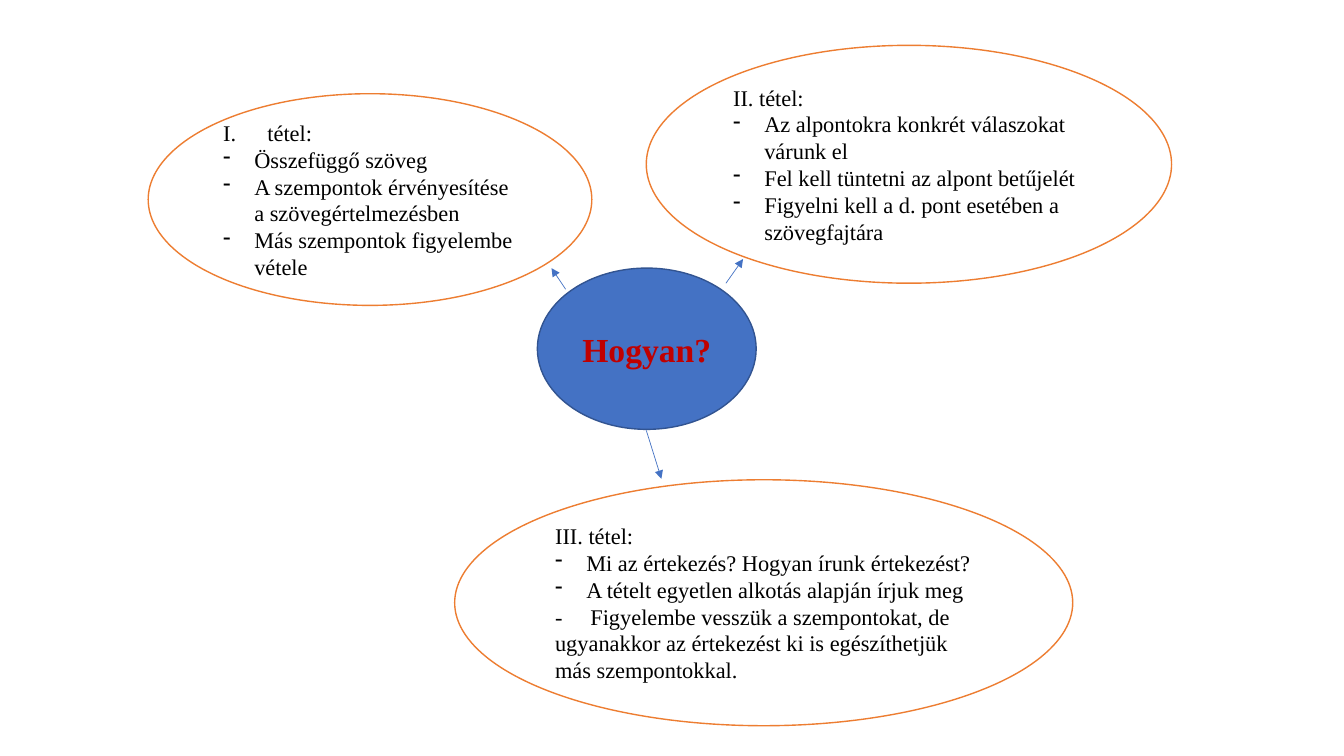
"""Build a slide with a central question and arrows to three exam topics."""
from lxml.etree import SubElement
from pptx import Presentation
from pptx.dml.color import RGBColor
from pptx.enum.shapes import MSO_CONNECTOR, MSO_SHAPE
from pptx.enum.text import MSO_ANCHOR, PP_ALIGN
from pptx.oxml.ns import qn
from pptx.util import Pt

PX = 9144
THEME = {
    "font": "Times New Roman",
    "blue": RGBColor.from_string("4472C4"),
    "navy": RGBColor.from_string("325491"),
    "orange": RGBColor.from_string("ED7D31"),
    "white": RGBColor.from_string("FFFFFF"),
    "black": RGBColor.from_string("000000"),
    "red": RGBColor.from_string("C00000"),
    "hub_size": Pt(24),
    "body_size": Pt(16),
    "outline": Pt(1),
    "arrow": Pt(0.5),
}
MARKS = {
    "dash": (31, "buChar", {"char": "-"}),
    "roman": (44, "buAutoNum", {"type": "romanUcPeriod"}),
}
TOPICS = [
    {
        "box": (147, 93, 440, 210),
        "arrow": (561, 287, 547, 266),
        "lines": [
            ("roman", "tétel:"),
            ("dash", "Összefüggő szöveg"),
            ("dash", "A szempontok érvényesítése a szövegértelmezésben"),
            ("dash", "Más szempontok figyelembe vétele"),
        ],
    },
    {
        "box": (641, 45, 521, 236),
        "arrow": (720, 281, 737, 257),
        "lines": [
            ("plain", "II. tétel:"),
            ("dash", "Az alpontokra konkrét válaszokat várunk el"),
            ("dash", "Fel kell tüntetni az alpont betűjelét"),
            ("dash", "Figyelni kell a d. pont esetében a szövegfajtára"),
        ],
    },
    {
        "box": (451, 476, 613, 244),
        "arrow": (641, 427, 656, 475),
        "lines": [
            ("plain", "III. tétel:"),
            ("dash", "Mi az értekezés? Hogyan írunk értekezést?"),
            ("dash", "A tételt egyetlen alkotás alapján írjuk meg"),
            ("tab", "-\tFigyelembe vesszük a szempontokat, de ugyanakkor az "
                    "értekezést ki is egészíthetjük más szempontokkal."),
        ],
    },
]


def add_ellipse(slide, box, fill, line):
    """Add an outlined ellipse with vertically centred text."""
    sp = slide.shapes.add_shape(MSO_SHAPE.OVAL, *[v * PX for v in box])
    sp.shadow.inherit = False
    sp.fill.solid()
    sp.fill.fore_color.rgb = THEME[fill]
    sp.line.color.rgb = THEME[line]
    sp.line.width = THEME["outline"]
    sp.text_frame.word_wrap = True
    sp.text_frame.vertical_anchor = MSO_ANCHOR.MIDDLE
    return sp


def add_text(p, text, color, **formats):
    """Add a formatted run to a paragraph."""
    r = p.add_run()
    r.text = text
    r.font.color.rgb = THEME[color]
    for name, value in {"name": THEME["font"], **formats}.items():
        setattr(r.font, name, value)


prs = Presentation()
prs.slide_width, prs.slide_height = 1333 * PX, 750 * PX
s = prs.slides.add_slide(prs.slide_layouts[6])

hub = add_ellipse(s, (533, 266, 217, 160), "blue", "navy")
p = hub.text_frame.paragraphs[0]
p.alignment = PP_ALIGN.CENTER
add_text(p, "Hogyan?", "red", size=THEME["hub_size"], bold=True)

for topic in TOPICS:
    cx = s.shapes.add_connector(MSO_CONNECTOR.STRAIGHT, *[v * PX for v in topic["arrow"]])
    cx.line.color.rgb = THEME["blue"]
    cx.line.width = THEME["arrow"]
    SubElement(cx.line._get_or_add_ln(), qn("a:tailEnd"), type="triangle")
    SubElement(cx._element.spPr, qn("a:effectLst"))

    tf = add_ellipse(s, topic["box"], "white", "orange").text_frame
    for i, (kind, text) in enumerate(topic["lines"]):
        p = tf.add_paragraph() if i else tf.paragraphs[0]
        p.alignment = PP_ALIGN.LEFT
        pPr = p._p.get_or_add_pPr()
        if kind in MARKS:
            indent, tag, attrs = MARKS[kind]
            pPr.set("marL", str(indent * PX))
            pPr.set("indent", str(-indent * PX))
            SubElement(pPr, qn("a:buFontTx"))
            SubElement(pPr, qn(f"a:{tag}"), attrs)
        elif kind == "tab":
            tabs = SubElement(pPr, qn("a:tabLst"))
            SubElement(tabs, qn("a:tab"), pos=str(35 * PX), algn="l")
        add_text(p, text, "black", size=THEME["body_size"])

prs.save("out.pptx")
